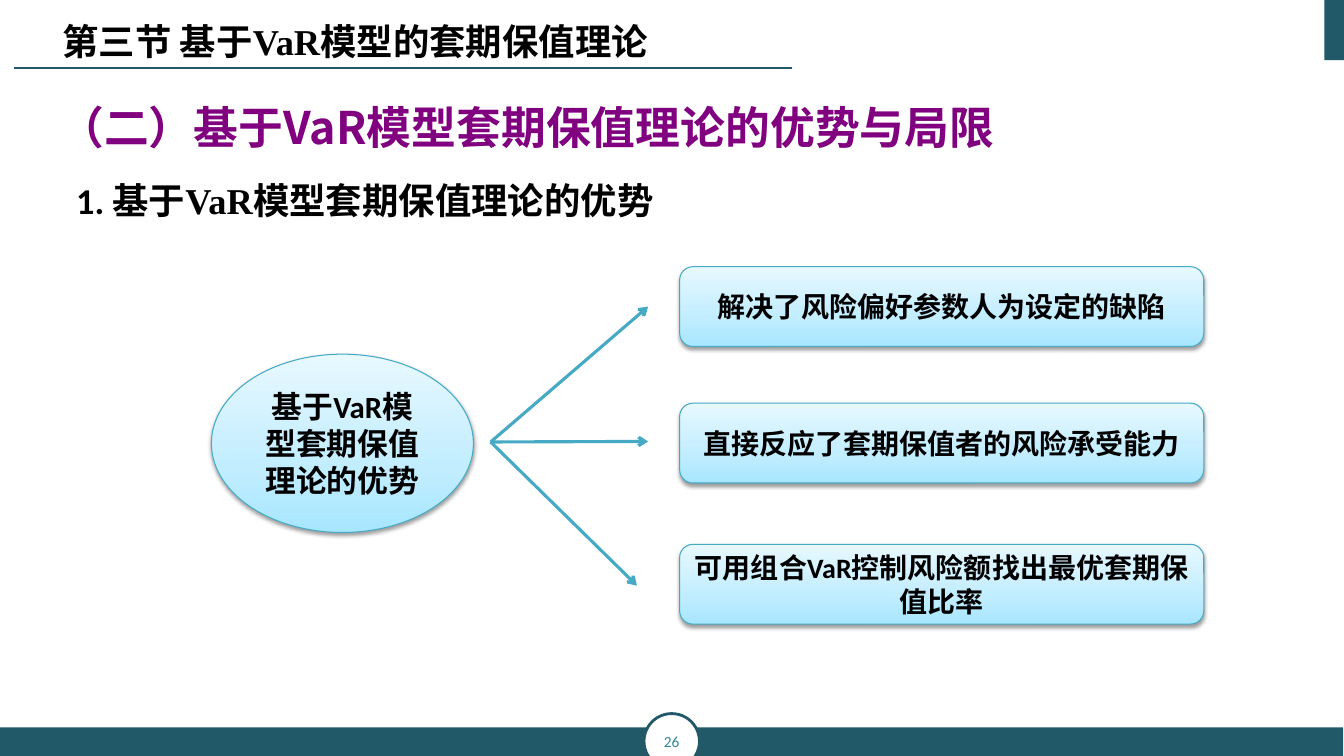
from lxml import etree
from pptx import Presentation
from pptx import util as u
from pptx.dml.color import RGBColor
from pptx.enum import shapes, text
from pptx.oxml import ns
from copy import deepcopy

TEAL = RGBColor(0x21, 0x59, 0x68)
PAGE_BLUE = RGBColor(0x31, 0x85, 0x9C)
EDGE_BLUE = RGBColor(0x46, 0xAA, 0xC5)
PURPLE = RGBColor(0x80, 0x00, 0x80)
BLACK = RGBColor(0, 0, 0)
WHITE = RGBColor(0xFF, 0xFF, 0xFF)
GLOSS = [
    (0, RGBColor(0xA7, 0xE6, 0xFF)),
    (0.35, RGBColor(0xC1, 0xED, 0xFF)),
    (1, RGBColor(0xE7, 0xF8, 0xFF)),
]
SANS, SERIF, CJK = "Calibri", "Times New Roman", "Noto Sans CJK SC"
OVAL = shapes.MSO_SHAPE.OVAL
RECTANGLE = shapes.MSO_SHAPE.RECTANGLE
ROUNDED = shapes.MSO_SHAPE.ROUNDED_RECTANGLE


class SlideBuilder:
    """Draw styled elements on one slide, with lengths in points."""

    def __init__(self, slide):
        self.shapes = slide.shapes

    def child(self, parent, tag, **attributes):
        return etree.SubElement(parent, ns.qn(tag), attributes)

    def add_runs(self, paragraph, pieces, size, color, bold=True):
        for wording, face in pieces:
            run = paragraph.add_run()
            run.text = wording
            font = run.font
            font.name, font.size, font.bold = face, u.Pt(size), bold
            font.color.rgb = color
            self.child(run._r.get_or_add_rPr(), "a:ea", typeface=CJK)

    def shape(self, kind, box, fill, edge=None, weight=0):
        shape = self.shapes.add_shape(kind, *map(u.Pt, box))
        shape.shadow.inherit = False
        if fill is GLOSS:
            self.gloss(shape)
        else:
            shape.fill.solid()
            shape.fill.fore_color.rgb = fill
        if edge is None:
            shape.line.fill.background()
        else:
            shape.line.color.rgb = edge
            shape.line.width = u.Pt(weight)
        return shape

    def gloss(self, shape):
        shape.fill.gradient()
        shape.fill.gradient_angle = 90
        properties = shape._element.spPr
        stops = properties.find(ns.qn("a:gradFill")).find(ns.qn("a:gsLst"))
        stops.insert(1, deepcopy(stops[0]))
        for stop, (position, color) in zip(shape.fill.gradient_stops, GLOSS):
            stop.position = position
            stop.color.rgb = color
        shadow = self.child(
            properties.find(ns.qn("a:effectLst")), "a:outerShdw",
            blurRad=str(u.Pt(3.1)), dist=str(u.Pt(1.6)),
            dir="5400000", rotWithShape="0")
        shade = self.child(shadow, "a:srgbClr", val="000000")
        self.child(shade, "a:alpha", val="38000")

    def label(self, shape, wording, size, color=BLACK, bold=True):
        frame = shape.text_frame
        frame.word_wrap = True
        frame.vertical_anchor = text.MSO_ANCHOR.MIDDLE
        paragraph = frame.paragraphs[0]
        paragraph.alignment = text.PP_ALIGN.CENTER
        self.add_runs(paragraph, [(wording, SANS)], size, color, bold)

    def textbox(self, box, anchor=text.MSO_ANCHOR.TOP):
        frame = self.shapes.add_textbox(*map(u.Pt, box)).text_frame
        frame.word_wrap = True
        frame.vertical_anchor = anchor
        return frame

    def line(self, start, end, color, weight, arrow=False):
        line = self.shapes.add_connector(
            shapes.MSO_CONNECTOR.STRAIGHT, *map(u.Pt, (*start, *end)))
        line.line.color.rgb = color
        line.line.width = u.Pt(weight)
        properties = line._element.spPr
        if arrow:
            self.child(properties.find(ns.qn("a:ln")), "a:tailEnd", type="arrow")
        self.child(properties, "a:effectLst")


def main():
    deck = Presentation()
    deck.slide_width, deck.slide_height = u.Pt(960), u.Pt(540)
    page = SlideBuilder(deck.slides.add_slide(deck.slide_layouts[6]))

    page.shape(RECTANGLE, (946, 0, 14, 43), TEAL)
    page.shape(RECTANGLE, (0, 519.5, 959.5, 20.5), TEAL)
    page_number = page.shape(OVAL, (460, 509.7, 39.6, 39.6), WHITE, TEAL, 2)
    page.label(page_number, "26", 11, PAGE_BLUE, bold=False)
    page.line((566, 48.8), (10, 48.8), TEAL, 1.5)

    section = page.textbox((37.4, 9.4, 561.6, 39), text.MSO_ANCHOR.MIDDLE)
    page.add_runs(section.paragraphs[0], [
        ("第三节 基于", CJK), ("VaR", SERIF), ("模型的套期保值理论", CJK)], 26, BLACK)

    outline = page.textbox((35.3, 48.2, 901.4, 443.5))
    heading = outline.paragraphs[0]
    heading.line_spacing = 1.5
    page.add_runs(heading, [("（二）基于VaR模型套期保值理论的优势与局限", CJK)], 32, PURPLE)
    advantage = outline.add_paragraph()
    advantage.line_spacing = 1.5
    advantage.space_before = u.Pt(2)
    advantage._p.get_or_add_pPr().set("indent", str(u.Pt(12)))
    page.add_runs(advantage, [
        ("1. 基于", SANS), ("VaR", SERIF), ("模型套期保值理论的优势", SANS)], 26, BLACK)

    hub = page.shape(OVAL, (151, 253, 187.2, 127.4), GLOSS, EDGE_BLUE, 0.75)
    page.label(hub, "基于VaR模型套期保值理论的优势", 22)

    branches = [
        ("解决了风险偏好参数人为设定的缺陷", 190.5, (463, 219)),
        ("直接反应了套期保值者的风险承受能力", 288, (463, 315.3)),
        ("可用组合VaR控制风险额找出最优套期保值比率", 388.8, (455, 418.3)),
    ]
    for benefit, top, tip in branches:
        page.line((350.5, 315.7), tip, EDGE_BLUE, 2.25, arrow=True)
        card = page.shape(ROUNDED, (485.5, top, 374.4, 57), GLOSS, EDGE_BLUE, 0.75)
        page.label(card, benefit, 20)

    deck.save("out.pptx")


if __name__ == "__main__":
    main()
